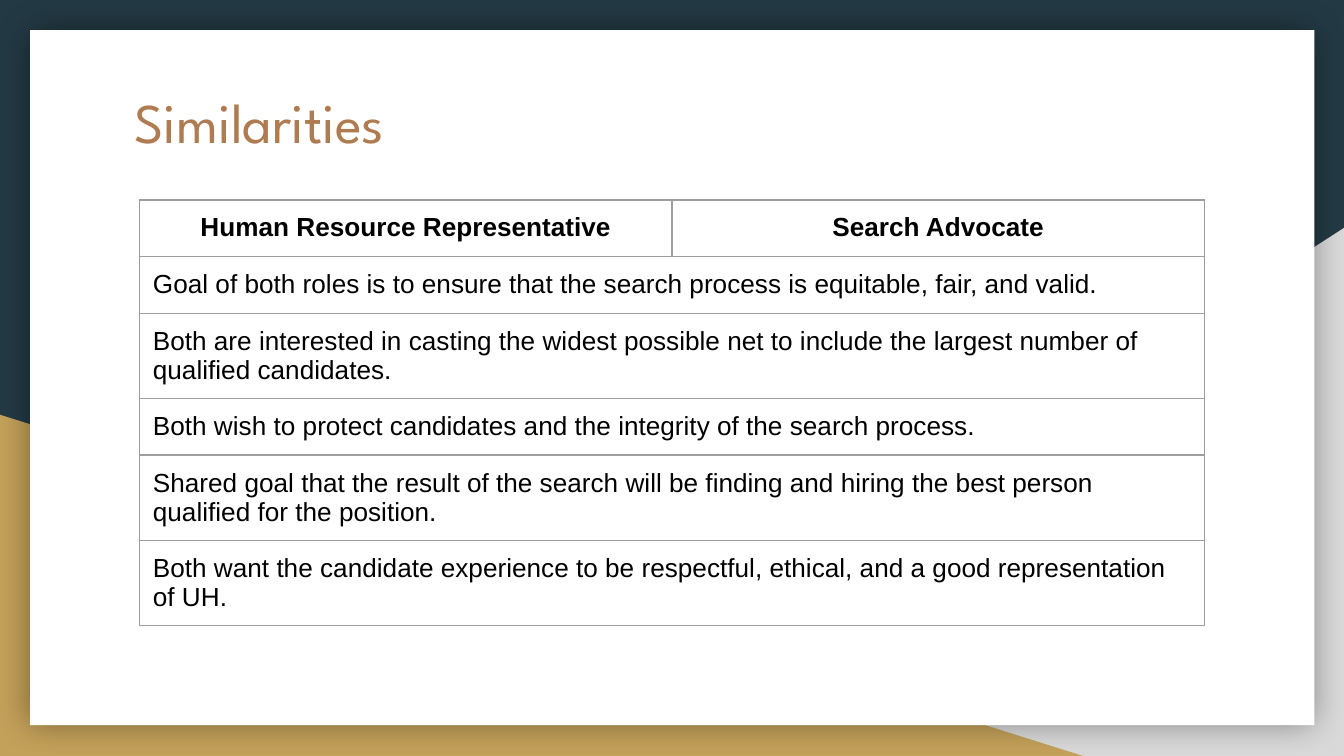
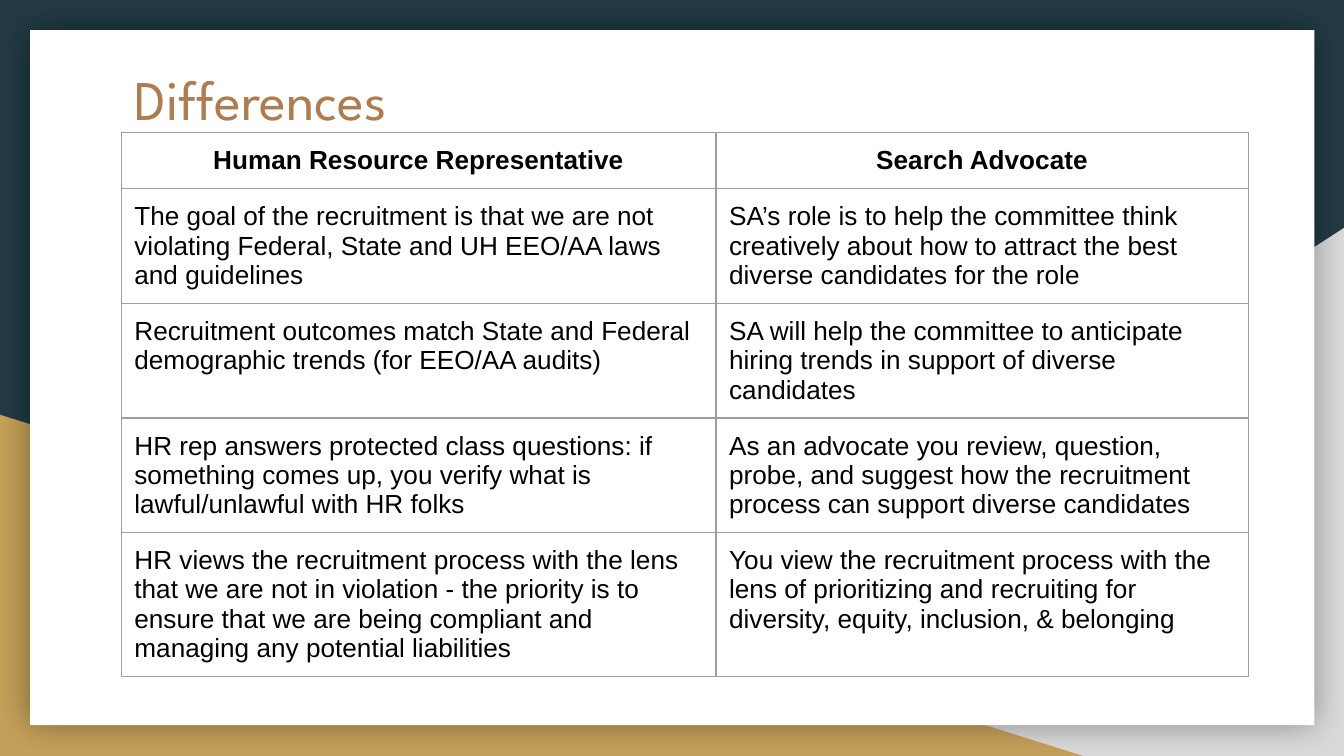
from lxml.etree import SubElement
from pptx import Presentation
from pptx.dml.color import RGBColor
from pptx.enum.shapes import MSO_SHAPE as Preset
from pptx.enum.text import MSO_ANCHOR as Anchor, MSO_AUTO_SIZE as AutoSize, PP_ALIGN as Align
from pptx.oxml.ns import qn
from pptx.util import Cm, Pt

COLORS = {
    "background": "233A44",
    "gray": "D9D9D9",
    "gold": "C4A15A",
    "card": "FFFFFF",
    "title": "AF7B51",
    "text": "000000",
    "border": "9E9E9E",
}
TITLE_ONLY = 5
INSET = Cm(0.25)
ROW_HEIGHT = Cm(1.07)
HEADERS = ("Human Resource Representative", "Search Advocate")
SIMILARITIES = [
    "Goal of both roles is to ensure that the search process is equitable, fair, and valid.",
    "Both are interested in casting the widest possible net to include the largest number of qualified candidates.",
    "Both wish to protect candidates and the integrity of the search process.",
    "Shared goal that the result of the search will be finding and hiring the best person qualified for the position.",
    "Both want the candidate experience to be respectful, ethical, and a good representation of UH.",
]
DIFFERENCES = [
    ("The goal of the recruitment is that we are not violating Federal, State and UH EEO/AA laws and guidelines",
     "SA’s role is to help the committee think creatively about how to attract the best diverse candidates for the role"),
    ("Recruitment outcomes match State and Federal demographic trends (for EEO/AA audits)",
     "SA will help the committee to anticipate hiring trends in support of diverse candidates"),
    ("HR rep answers protected class questions: if something comes up, you verify what is lawful/unlawful with HR folks",
     "As an advocate you review, question, probe, and suggest how the recruitment process can support diverse candidates"),
    ("HR views the recruitment process with the lens that we are not in violation - the priority is to ensure that we are being compliant and managing any potential liabilities",
     "You view the recruitment process with the lens of prioritizing and recruiting for diversity, equity, inclusion, & belonging"),
]


def rgb(name):
    """Return the named palette colour."""
    return RGBColor.from_string(COLORS[name])


class Deck:
    """Hold the presentation style and the current slide."""

    def __init__(self):
        """Create the presentation and its shared layout."""
        self.presentation = Presentation()
        self.presentation.slide_width = Cm(25.4)
        self.presentation.slide_height = Cm(14.29)
        self.layout = self.presentation.slide_layouts[TITLE_ONLY]
        fill = self.layout.background.fill
        fill.solid()
        fill.fore_color.rgb = rgb("background")
        self.slide = None

    def add_slide(self):
        """Start a new slide."""
        self.slide = self.presentation.slides.add_slide(self.layout)

    def layout_shape(self, preset, color, left, top, width, height):
        """Draw a plain shape and move it to the shared layout."""
        shape = self.slide.shapes.add_shape(preset, Cm(left), Cm(top), Cm(width), Cm(height))
        shape.shadow.inherit = False
        shape.fill.solid()
        shape.fill.fore_color.rgb = rgb(color)
        shape.line.fill.background()
        tree = self.layout.shapes.element
        shape.element.nvSpPr.cNvPr.set("id", str(100 + len(tree)))
        tree.append(shape.element)
        return shape

    def backdrop(self):
        """Draw the corner triangles and the white card."""
        gray = self.layout_shape(Preset.RIGHT_TRIANGLE, "gray", 9.96, 4.31, 15.44, 9.98)
        gray.element.spPr.xfrm.set("flipH", "1")
        self.layout_shape(Preset.RIGHT_TRIANGLE, "gold", 0, 7.84, 20.47, 6.45)
        card = self.layout_shape(Preset.RECTANGLE, "card", 0.57, 0.57, 24.27, 13.14)
        effects = card.element.spPr.find(qn("a:effectLst"))
        shadow = SubElement(effects, qn("a:outerShdw"), blurRad=str(Pt(18)), dist="0",
                            dir="0", algn="ctr", rotWithShape="0")
        color = SubElement(shadow, qn("a:srgbClr"), val=COLORS["text"])
        SubElement(color, qn("a:alpha"), val="40000")

    def title(self, text, top):
        """Fill and place the title placeholder."""
        shape = self.slide.shapes.title
        shape.left, shape.top, shape.width, shape.height = Cm(2.29), Cm(top), Cm(20.85), Cm(2.08)
        frame = shape.text_frame
        frame.text = text
        frame.auto_size = AutoSize.NONE
        frame.vertical_anchor = Anchor.MIDDLE
        frame.margin_left = frame.margin_right = frame.margin_top = frame.margin_bottom = INSET
        paragraph = frame.paragraphs[0]
        paragraph.alignment = Align.LEFT
        self.format_font(paragraph, "League Spartan", 30, "title")

    def format_font(self, paragraph, name, size, color, bold=False):
        """Format every run of a paragraph."""
        for run in paragraph.runs:
            run.font.name = name
            run.font.size = Pt(size)
            run.font.color.rgb = rgb(color)
            run.font.bold = bold

    def table(self, left, top, widths, rows):
        """Add a bordered table; a row with one text spans all columns."""
        shape = self.slide.shapes.add_table(len(rows), len(widths), Cm(left), Cm(top),
                                            Cm(sum(widths)), ROW_HEIGHT * len(rows))
        table = shape.table
        table.first_row = table.horz_banding = False
        for column, width in zip(table.columns, widths):
            column.width = Cm(width)
        for index, texts in enumerate(rows):
            if len(texts) == 1:
                table.cell(index, 0).merge(table.cell(index, len(widths) - 1))
            for column in range(len(widths)):
                self.format_cell(table.cell(index, column))
            for column, text in enumerate(texts):
                cell = table.cell(index, column)
                cell.text_frame.text = text
                paragraph = cell.text_frame.paragraphs[0]
                paragraph.alignment = Align.LEFT if index else Align.CENTER
                self.format_font(paragraph, "Arial", 14, "text", bold=index == 0)

    def format_cell(self, cell):
        """Set the margins, borders and empty fill of a cell."""
        cell.margin_left = cell.margin_right = cell.margin_top = cell.margin_bottom = INSET
        properties = cell._tc.get_or_add_tcPr()
        for side in ("lnL", "lnR", "lnT", "lnB"):
            line = SubElement(properties, qn(f"a:{side}"), w=str(Pt(0.75)))
            fill = SubElement(line, qn("a:solidFill"))
            SubElement(fill, qn("a:srgbClr"), val=COLORS["border"])
        cell.fill.background()


def main():
    """Build both slides and save them."""
    deck = Deck()
    deck.add_slide()
    deck.backdrop()
    deck.table(2.64, 3.78, (10.06, 10.06), [HEADERS] + [(text,) for text in SIMILARITIES])
    deck.title("Similarities", 1.24)
    deck.add_slide()
    deck.table(2.29, 2.5, (11.24, 10.06), [HEADERS] + DIFFERENCES)
    deck.title("Differences", 0.81)
    deck.presentation.save("out.pptx")


if __name__ == "__main__":
    main()
